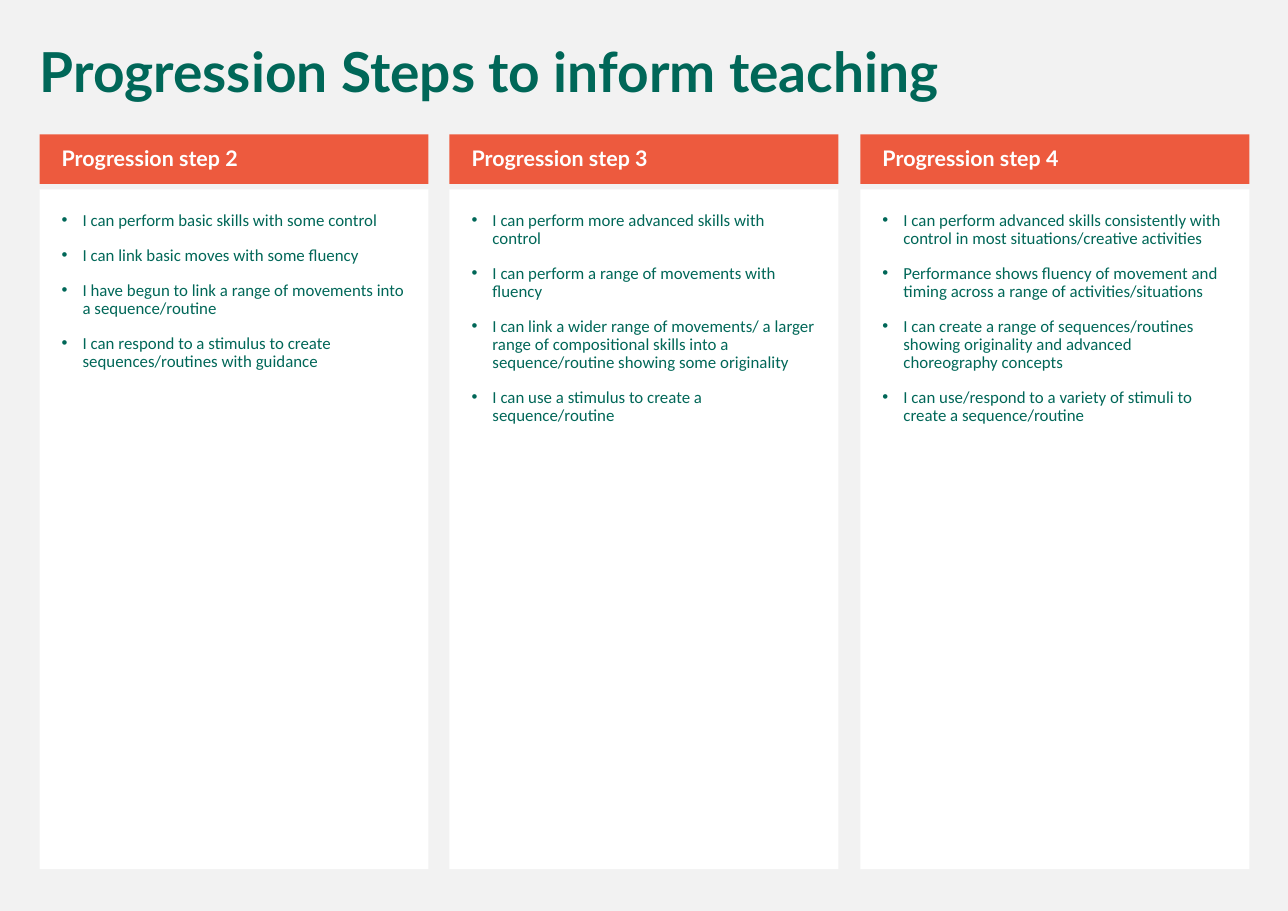
from lxml import etree
from pptx import Presentation, util as u
from pptx.dml.color import RGBColor
from pptx.enum import shapes, text
from pptx.oxml.ns import qn

PX = 9144
GREEN = RGBColor(0x00, 0x67, 0x58)
ORANGE = RGBColor(0xED, 0x5A, 0x3E)
WHITE = RGBColor(0xFF, 0xFF, 0xFF)
PALE_GREY = RGBColor(0xF2, 0xF2, 0xF2)

HEADING = "Progression Steps to inform teaching"
STEPS = [
    ("Progression step 2", [
        "I can perform basic skills with some control",
        "I can link basic moves with some fluency",
        "I have begun to link a range of movements into a sequence/routine",
        "I can respond to a stimulus to create sequences/routines with guidance",
    ]),
    ("Progression step 3", [
        "I can perform more advanced skills with control",
        "I can perform a range of movements with fluency",
        "I can link a wider range of movements/ a larger range of compositional "
        "skills into a sequence/routine showing some originality",
        "I can use a stimulus to create a sequence/routine",
    ]),
    ("Progression step 4", [
        "I can perform advanced skills consistently with control in most "
        "situations/creative activities",
        "Performance shows fluency of movement and timing across a range of "
        "activities/situations",
        "I can create a range of sequences/routines showing originality and "
        "advanced choreography concepts",
        "I can use/respond to a variety of stimuli to create a sequence/routine",
    ]),
]


def px(length):
    return u.Emu(length * PX)


def add_bullet(paragraph):
    properties = paragraph._p.get_or_add_pPr()
    properties.set("marL", str(px(19)))
    properties.set("indent", str(px(-19)))
    etree.SubElement(properties, qn("a:buFont")).set("typeface", "Arial")
    etree.SubElement(properties, qn("a:buChar")).set("char", "•")


def write(frame, lines, font, size, colour, bold=False, bullets=False):
    frame.word_wrap = True
    frame.auto_size = text.MSO_AUTO_SIZE.NONE
    for number, line in enumerate(lines):
        paragraph = frame.add_paragraph() if number else frame.paragraphs[0]
        paragraph.text = line
        paragraph.alignment = text.PP_ALIGN.LEFT
        paragraph.line_spacing = 0.9
        paragraph.space_before = u.Pt(11)
        if bullets:
            add_bullet(paragraph)
        paragraph.font.name = font
        paragraph.font.size = u.Pt(size)
        paragraph.font.bold = bold
        paragraph.font.color.rgb = colour


def add_panel(slide, box, fill, insets, anchor):
    panel = slide.shapes.add_shape(shapes.MSO_SHAPE.RECTANGLE, *map(px, box))
    panel.shadow.inherit = False
    panel.fill.solid()
    panel.fill.fore_color.rgb = fill
    panel.line.fill.background()
    frame = panel.text_frame
    (frame.margin_left, frame.margin_top,
     frame.margin_right, frame.margin_bottom) = map(px, insets)
    frame.vertical_anchor = anchor
    return frame


def add_title(slide, left, top, width, height):
    title = slide.shapes.title
    title.left, title.top, title.width, title.height = map(
        px, (left, top, width, height))
    title.text_frame.vertical_anchor = text.MSO_ANCHOR.TOP
    write(title.text_frame, [HEADING], "Lato", 36, GREEN, bold=True)


def add_step(slide, left, top, width, height, name, statements):
    header_height, gap = 45, 5
    body_offset = header_height + gap
    body = add_panel(
        slide, (left, top + body_offset, width, height - body_offset),
        WHITE, (20, 20, 20, 20), text.MSO_ANCHOR.TOP)
    write(body, statements, "Calibri", 11, GREEN, bullets=True)
    header = add_panel(
        slide, (left, top, width, header_height),
        ORANGE, (20, 5, 10, 5), text.MSO_ANCHOR.MIDDLE)
    write(header, [name], "Lato", 14, WHITE, bold=True)


def add_steps(slide, left, top, width, height):
    step_width = 353
    pitch = (width - step_width) / (len(STEPS) - 1)
    for column, (name, statements) in enumerate(STEPS):
        add_step(slide, left + round(column * pitch), top, step_width, height,
                 name, statements)


def main():
    deck = Presentation()
    deck.slide_width, deck.slide_height = px(1169), px(827)
    slide = deck.slides.add_slide(deck.slide_layouts.get_by_name("Title Only"))
    slide.background.fill.solid()
    slide.background.fill.fore_color.rgb = PALE_GREY
    add_title(slide, 26, 36, 1108, 65)
    add_steps(slide, 36, 122, 1098, 667)
    deck.save("out.pptx")


if __name__ == "__main__":
    main()
